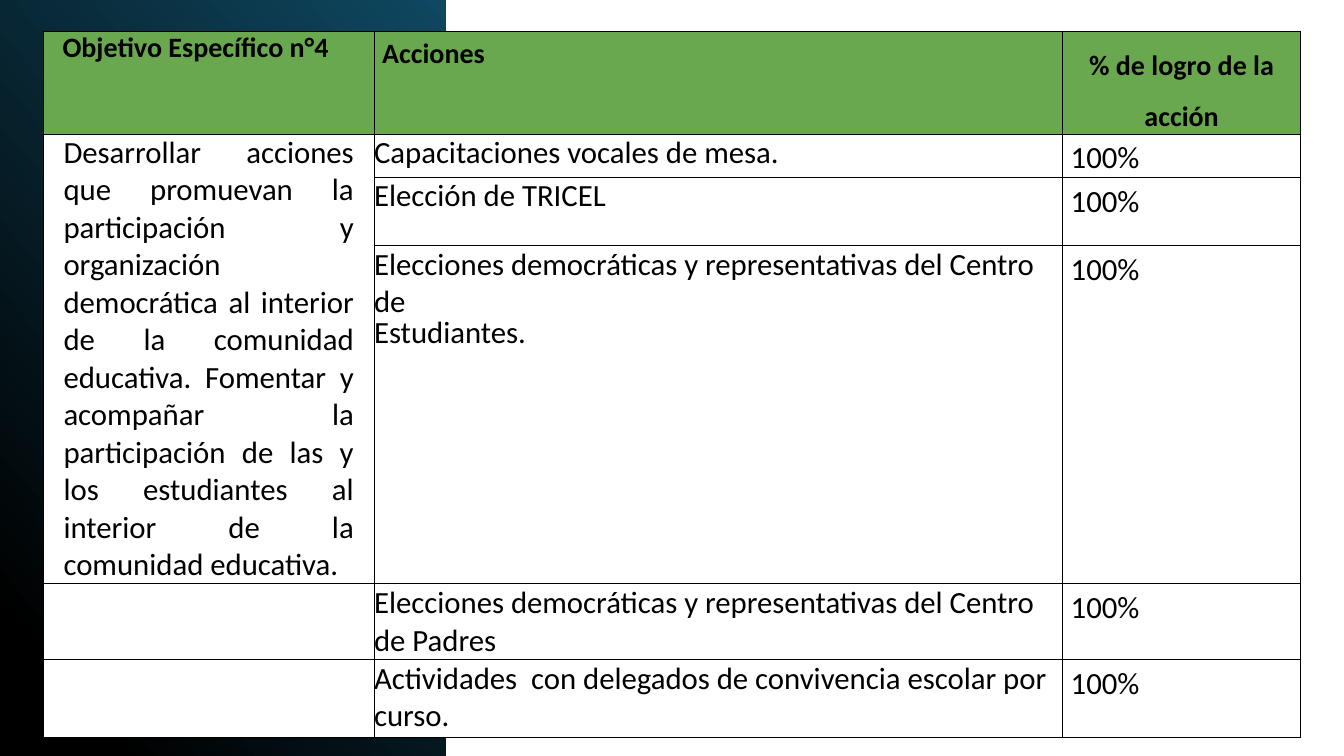
from dataclasses import dataclass

from lxml import etree
from pptx import Presentation
from pptx.dml.color import RGBColor
from pptx.enum.shapes import MSO_SHAPE as Shape
from pptx.enum.text import PP_ALIGN as Align
from pptx.oxml.ns import qn
from pptx.util import Inches, Pt


@dataclass(frozen=True)
class Theme:
    font: str = "Calibri"
    ink: str = "000000"
    teal: str = "0F4861"
    green: str = "6AA84F"
    white: str = "FFFFFF"
    header_size: int = 20
    body_size: int = 22
    thin: float = 0.5
    medium: float = 0.75


THEME = Theme()
COLUMN_WIDTHS = [3.28, 6.83, 2.36]
ROW_HEIGHTS = [0.97, 0.42, 0.68, 3.14, 0.71, 0.77]
INDENTED = {"left": 0.08, "line_spacing": 1.15}

HEADERS = [
    ("Objetivo Específico n°4", {"left": 0.19}),
    ("Acciones", INDENTED),
    ("% de logro de la acción", {"alignment": Align.CENTER, "line_spacing": 1.5}),
]
OBJECTIVE = (
    "Desarrollar acciones que promuevan la participación y organización "
    "democrática al interior de la comunidad educativa. Fomentar y acompañar la "
    "participación de las y los estudiantes al interior de la comunidad educativa."
)
# Each action is a list of paragraphs, followed by its progress
ACTIONS = [
    ([("Capacitaciones vocales de mesa.", {})], "100%"),
    ([("Elección de TRICEL", {})], "100%"),
    ([("Elecciones democráticas y representativas del Centro de", {}),
      ("Estudiantes.", {"line_spacing": 0.74, "space_before": Pt(0.1)})], "100%"),
    ([("Elecciones democráticas y representativas del Centro de Padres",
       {"line_spacing": 1.01})], "100%"),
    ([("Actividades  con delegados de convivencia escolar por curso.",
       {"line_spacing": 1.01, "space_before": Pt(4.4)})], "100%"),
]


def add_gradient_panel(page):
    """Dark panel behind the left side of the table."""
    panel = page.shapes.add_shape(
        Shape.RECTANGLE, Inches(-1.55), Inches(1.55), Inches(7.52), Inches(4.42))
    panel.rotation = 90
    panel.shadow.inherit = False
    panel.line.fill.background()
    panel.fill.gradient()
    panel.fill.gradient_angle = 50
    properties = panel._element.spPr
    properties.find(qn("a:xfrm")).set("flipH", "1")
    stops = properties.find(".//" + qn("a:gsLst"))
    for stop in list(stops):
        stops.remove(stop)
    for percent, color in [(0, THEME.ink), (11, THEME.ink), (100, THEME.teal)]:
        stop = etree.SubElement(stops, qn("a:gs"), pos=str(percent * 1000))
        etree.SubElement(stop, qn("a:srgbClr"), val=color)


def set_borders(cell, widths):
    """Draw the left, right, top and bottom borders, in that order."""
    properties = cell._tc.get_or_add_tcPr()
    for side, width in zip("LRTB", widths):
        line = etree.SubElement(properties, qn(f"a:ln{side}"), w=str(Pt(width)))
        fill = etree.SubElement(line, qn("a:solidFill"))
        etree.SubElement(fill, qn("a:srgbClr"), val=THEME.ink)


def style_cell(cell, color, widths):
    set_borders(cell, widths)
    cell.fill.solid()
    cell.fill.fore_color.rgb = RGBColor.from_string(color)
    for side in ("left", "right", "top", "bottom"):
        setattr(cell, f"margin_{side}", 0)


def write_cell(cell, paragraphs, size, bold=False):
    frame = cell.text_frame
    for index, (text, formats) in enumerate(paragraphs):
        para = frame.add_paragraph() if index else frame.paragraphs[0]
        span = para.add_run()
        span.text = text
        font = {"name": THEME.font, "size": Pt(size), "bold": bold}
        for name, value in font.items():
            setattr(span.font, name, value)
        span.font.color.rgb = RGBColor.from_string(THEME.ink)
        for name, value in formats.items():
            if name in ("left", "right"):
                attribute = "marL" if name == "left" else "marR"
                para._p.get_or_add_pPr().set(attribute, str(Inches(value)))
            else:
                setattr(para, name, value)


def add_grid(page):
    """Empty table with its sizes, fills and borders."""
    table = page.shapes.add_table(
        len(ROW_HEIGHTS), len(COLUMN_WIDTHS), Inches(0.43), Inches(0.31),
        Inches(sum(COLUMN_WIDTHS)), Inches(sum(ROW_HEIGHTS))).table
    table.first_row = table.horz_banding = False
    for column, width in zip(table.columns, COLUMN_WIDTHS):
        column.width = Inches(width)
    for row, height in zip(table.rows, ROW_HEIGHTS):
        row.height = Inches(height)
    for row_index, row in enumerate(table.rows):
        for column_index, cell in enumerate(row.cells):
            # The lines below the objective are slightly heavier
            top = THEME.medium if column_index == 0 and row_index in (4, 5) else THEME.thin
            bottom = THEME.medium if column_index == 0 and row_index in (3, 4) else THEME.thin
            style_cell(cell, THEME.white if row_index else THEME.green,
                       [THEME.thin, THEME.thin, top, bottom])
    return table


def fill_grid(table):
    # Header row
    for column, header in enumerate(HEADERS):
        write_cell(table.cell(0, column), [header], THEME.header_size, bold=True)

    # Objective spanning three rows
    objective = table.cell(1, 0)
    objective.merge(table.cell(3, 0))
    justified = {"alignment": Align.JUSTIFY, "left": 0.2, "right": 0.2}
    write_cell(objective, [(OBJECTIVE, justified)], THEME.body_size)

    # Actions with their progress
    for row, (paragraphs, progress) in enumerate(ACTIONS, start=1):
        write_cell(table.cell(row, 1), paragraphs, THEME.body_size)
        write_cell(table.cell(row, 2), [(progress, INDENTED)], THEME.body_size)


def main():
    deck = Presentation()
    deck.slide_width, deck.slide_height = Inches(13.33), Inches(7.5)
    page = deck.slides.add_slide(deck.slide_layouts[6])
    add_gradient_panel(page)
    fill_grid(add_grid(page))
    deck.save("out.pptx")


if __name__ == "__main__":
    main()
